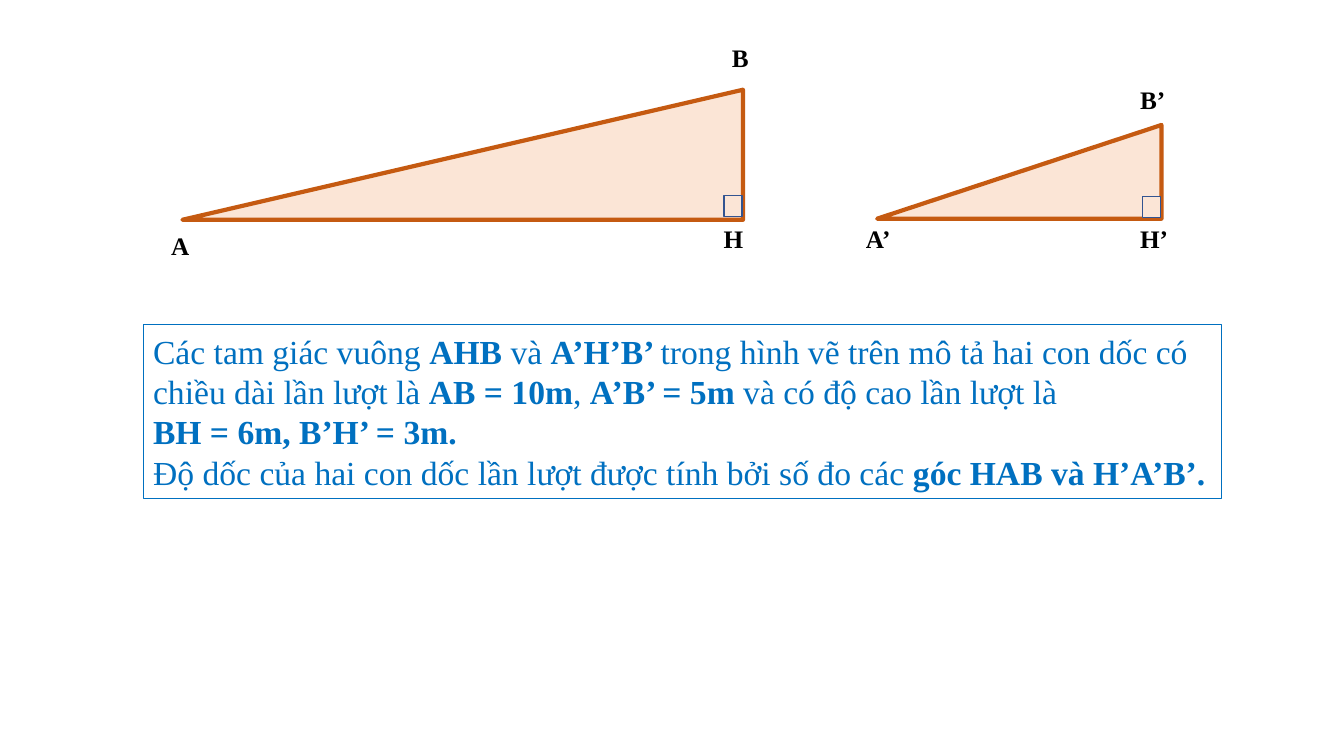
import pptx
import pptx.util
import pptx.dml.color
import pptx.enum.shapes
import pptx.enum.text

SHAPES = pptx.enum.shapes.MSO_SHAPE
PX = 9144  # 100 px to the inch
FONT = "Times New Roman"
BLACK, BLUE, NAVY = "000000", "0070C0", "325491"
PEACH, ORANGE = "FBE5D6", "C55A11"


def color(hex_string):
    return pptx.dml.color.RGBColor.from_string(hex_string)


def add_text(paragraph, text, size=18, ink=BLACK, bold=False):
    run = paragraph.add_run()
    run.text = text
    run.font.name = FONT
    run.font.size = pptx.util.Pt(size)
    run.font.bold = bold
    run.font.color.rgb = color(ink)


class SlideBuilder:
    def __init__(self, presentation):
        self.slide = presentation.slides.add_slide(presentation.slide_layouts[6])

    def shape(self, kind, box, line, width, fill=None):
        shape = self.slide.shapes.add_shape(kind, *(value * PX for value in box))
        shape.shadow.inherit = False
        if fill:
            shape.fill.solid()
            shape.fill.fore_color.rgb = color(fill)
        else:
            shape.fill.background()
        shape.line.color.rgb = color(line)
        shape.line.width = pptx.util.Pt(width)
        return shape

    def right_triangle(self, box, corner):
        triangle = self.shape(SHAPES.RIGHT_TRIANGLE, box, ORANGE, 3, PEACH)
        triangle.element.spPr.xfrm.set("flipH", "1")
        self.shape(SHAPES.FLOWCHART_PROCESS, (*corner, 18, 21), NAVY, 1, PEACH)

    def label(self, text, left, top, width):
        box = self.slide.shapes.add_textbox(left * PX, top * PX, width * PX, 45 * PX)
        box.text_frame.word_wrap = False
        add_text(box.text_frame.paragraphs[0], text, bold=True)

    def statement(self, box, paragraphs):
        frame = self.shape(SHAPES.RECTANGLE, box, BLUE, 0.5).text_frame
        frame.word_wrap = True
        frame.vertical_anchor = pptx.enum.text.MSO_ANCHOR.MIDDLE
        for index, runs in enumerate(paragraphs):
            paragraph = frame.add_paragraph() if index else frame.paragraphs[0]
            paragraph.alignment = pptx.enum.text.PP_ALIGN.LEFT
            for text, bold in runs:
                add_text(paragraph, text, size=24, ink=BLUE, bold=bold)


def main():
    presentation = pptx.Presentation()
    presentation.slide_width = 1333 * PX
    presentation.slide_height = 750 * PX
    builder = SlideBuilder(presentation)

    # Two slopes with their right angles
    builder.right_triangle((181, 89, 556, 129), corner=(718, 194))
    builder.right_triangle((870, 124, 282, 93), corner=(1133, 195))

    # Vertex names
    for text, left, top, width in (
        ("A", 160, 224, 42), ("B", 716, 37, 40), ("H", 708, 217, 44),
        ("A’", 849, 217, 50), ("B’", 1121, 79, 50), ("H’", 1121, 217, 53),
    ):
        builder.label(text, left, top, width)

    # Problem statement: each run with its bold flag
    builder.statement((142, 322, 1069, 172), [
        [("Các tam giác vuông ", False), ("AHB ", True), ("và ", False),
         ("A’H’B’ ", True),
         ("trong hình vẽ trên mô tả hai con dốc có chiều dài lần lượt là ", False),
         ("AB = 10m", True), (", ", False), ("A’B’ = 5m ", True),
         ("và có độ cao lần lượt là", False)],
        [("BH = 6m, B’H’ = 3m.", True)],
        [("Độ dốc của hai con dốc lần lượt được tính bởi số đo các ", False),
         ("góc HAB và H’A’B’.", True)],
    ])

    presentation.save("out.pptx")


if __name__ == "__main__":
    main()
